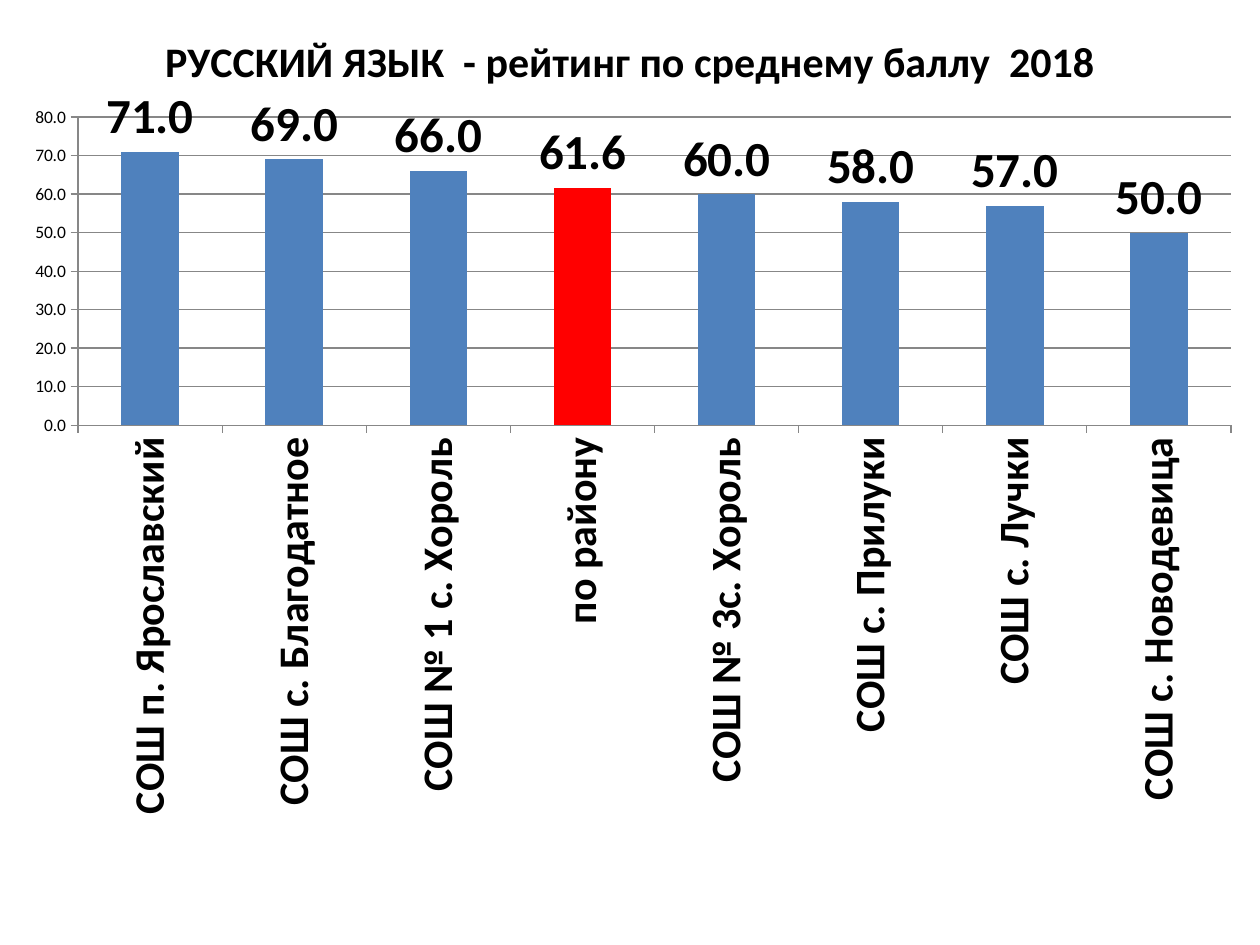
"""Build a slide with a column chart ranking schools by average score."""
from lxml import etree
from pptx import Presentation
from pptx.chart.data import CategoryChartData
from pptx.dml.color import RGBColor
from pptx.enum.chart import XL_CHART_TYPE, XL_LABEL_POSITION, XL_TICK_MARK
from pptx.util import Inches, Pt

COLUMN = XL_CHART_TYPE.COLUMN_CLUSTERED
OUTSIDE_END = XL_LABEL_POSITION.OUTSIDE_END
OUTSIDE = XL_TICK_MARK.OUTSIDE
NONE = XL_TICK_MARK.NONE
C_NS = "http://schemas.openxmlformats.org/drawingml/2006/chart"

SCORES = {
    "СОШ п. Ярославский": 71,
    "СОШ с. Благодатное": 69,
    "СОШ № 1 с. Хороль": 66,
    "по району": 61.6,
    "СОШ № 3с. Хороль": 60,
    "СОШ с. Прилуки": 58,
    "СОШ с. Лучки": 57,
    "СОШ с. Новодевица": 50,
}
DISTRICT = "по району"
PLOT = {"x": 0.062, "y": 0.124, "w": 0.915, "h": 0.326}


def rgb(color):
    return RGBColor.from_string(color)


def style(font, size, bold):
    for name, value in {"name": "Calibri", "size": Pt(size), "bold": bold}.items():
        setattr(font, name, value)
    font.color.rgb = rgb("000000")


prs = Presentation()
prs.slide_width, prs.slide_height = Inches(10), Inches(7.5)
s = prs.slides.add_slide(prs.slide_layouts[6])

data = CategoryChartData(number_format="0.0")
data.categories = list(SCORES)
data.add_series("Средний балл", list(SCORES.values()))
chart = s.shapes.add_chart(COLUMN, 0, 0, Inches(10), Inches(7.5), data).chart
chart.has_legend = False
style(chart.font, 10, False)

chart.has_title = True
p = chart.chart_title.text_frame.paragraphs[0]
r = p.add_run()
r.text = "РУССКИЙ ЯЗЫК  - рейтинг по среднему баллу  2018"
style(r.font, 24, True)
chart.chart_title.include_in_layout = False

cat, val = chart.category_axis, chart.value_axis
for axis, size, bold in ((cat, 24, True), (val, 10, False)):
    axis.major_tick_mark = OUTSIDE
    axis.minor_tick_mark = NONE
    style(axis.tick_labels.font, size, bold)
    axis.format.line.color.rgb = rgb("878787")
    axis.format.line.width = Pt(0.75)
cat.tick_labels.font._element.getparent().getparent().getparent().bodyPr.set("rot", "-5400000")

for name, value in {"minimum_scale": 0, "maximum_scale": 80, "major_unit": 10}.items():
    setattr(val, name, value)
val.has_major_gridlines = True
val.major_gridlines.format.line.color.rgb = rgb("878787")
val.major_gridlines.format.line.width = Pt(0.75)
val.tick_labels.number_format = "0.0"
val.tick_labels.number_format_is_linked = False

plot = chart.plots[0]
plot.gap_width = 150
plot.vary_by_categories = False
bars = plot.series[0]
bars.format.fill.solid()
bars.format.fill.fore_color.rgb = rgb("4F81BD")
fill = bars.points[list(SCORES).index(DISTRICT)].format.fill
fill.solid()
fill.fore_color.rgb = rgb("FF0000")

labels = bars.data_labels
for name, value in {
    "show_value": True,
    "number_format": "0.0",
    "number_format_is_linked": False,
    "position": OUTSIDE_END,
}.items():
    setattr(labels, name, value)
style(labels.font, 28, True)

area = chart._chartSpace.chart.plotArea
for old in area.findall(f"{{{C_NS}}}layout"):
    area.remove(old)
layout = etree.Element(f"{{{C_NS}}}layout")
manual = etree.SubElement(layout, f"{{{C_NS}}}manualLayout")
settings = {"layoutTarget": "inner", "xMode": "edge", "yMode": "edge", **PLOT}
for tag, value in settings.items():
    etree.SubElement(manual, f"{{{C_NS}}}{tag}", val=str(value))
area.insert(0, layout)

prs.save("out.pptx")
